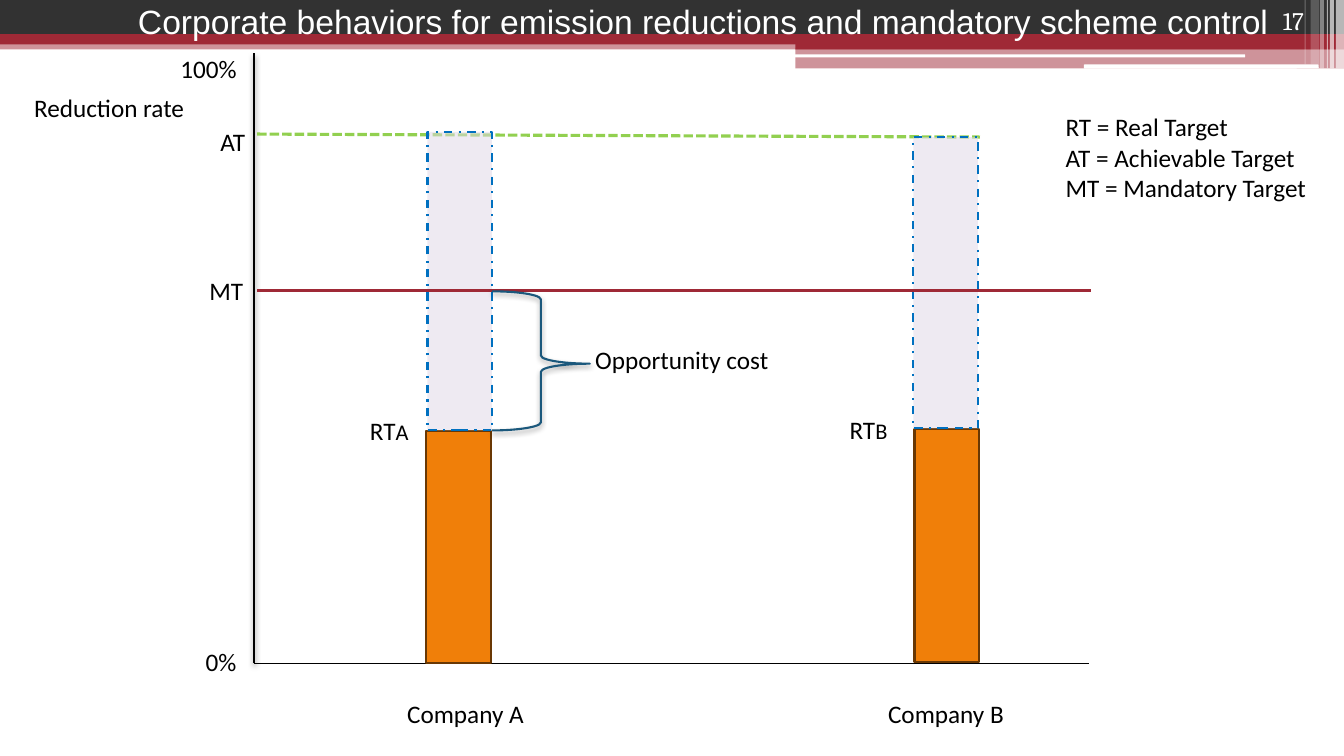
from dataclasses import dataclass
from typing import Optional

from pptx import Presentation, util as u
from pptx.dml.color import RGBColor
from pptx.enum import dml, shapes, text
from pptx.oxml import parse_xml
from pptx.oxml.ns import nsdecls, qn

RED, WHITE, BLACK = "9F2936", "FFFFFF", "000000"
ORANGE, BROWN, LILAC, BLUE = "F07F09", "693804", "DFD7E7", "0070C0"
NAVY, GREEN, CHARCOAL = "1B587C", "92D050", "323232"
RECT = shapes.MSO_SHAPE.RECTANGLE
ROUNDED = shapes.MSO_SHAPE.ROUNDED_RECTANGLE
BRACE = shapes.MSO_SHAPE.RIGHT_BRACE
DASH = dml.MSO_LINE
RIGHT = text.PP_ALIGN.RIGHT


@dataclass
class Block:
    left: float
    top: float
    width: float
    height: float
    fill: Optional[str] = None
    opacity: int = 100
    line: Optional[str] = None
    dash: Optional[DASH] = None
    kind: shapes.MSO_SHAPE = RECT
    adjustments: tuple = ()
    shadow: bool = False


@dataclass
class Rule:
    start: tuple
    end: tuple
    color: str
    weight: float
    dash: Optional[DASH] = None
    shadow: bool = False


@dataclass
class Label:
    left: float
    top: float
    width: float
    words: str
    suffix: str = ""
    align: Optional[text.PP_ALIGN] = None


def rgb(color: str) -> RGBColor:
    return RGBColor.from_string(color)


def set_effects(shape, shadow: bool) -> None:
    """Replace the theme shadow with a soft drop shadow or with nothing."""
    properties = shape._element.spPr
    for old in properties.findall(qn("a:effectLst")):
        properties.remove(old)
    drop = ('<a:outerShdw blurRad="52000" dist="25400" dir="5400000" rotWithShape="0">'
            '<a:srgbClr val="000000"><a:alpha val="40000"/></a:srgbClr></a:outerShdw>')
    properties.append(parse_xml(
        f'<a:effectLst {nsdecls("a")}>{drop if shadow else ""}</a:effectLst>'))


def set_line(line, color: str, weight: float, dash: Optional[DASH]) -> None:
    line.color.rgb = rgb(color)
    line.width = u.Pt(weight)
    if dash is not None:
        line.dash_style = dash


def draw_block(slide, block: Block) -> None:
    shape = slide.shapes.add_shape(block.kind, u.Inches(block.left), u.Inches(block.top),
                                   u.Inches(block.width), u.Inches(block.height))
    for index, value in enumerate(block.adjustments):
        shape.adjustments[index] = value
    if block.fill:
        shape.fill.solid()
        shape.fill.fore_color.rgb = rgb(block.fill)
        if block.opacity < 100:
            color = shape._element.spPr.find(qn("a:solidFill"))[0]
            color.append(parse_xml(
                f'<a:alpha {nsdecls("a")} val="{block.opacity * 1000}"/>'))
    else:
        shape.fill.background()
    if block.line:
        set_line(shape.line, block.line, 1.5, block.dash)
    else:
        shape.line.fill.background()
    set_effects(shape, block.shadow)


def draw_rule(slide, rule: Rule) -> None:
    points = [u.Inches(value) for value in (*rule.start, *rule.end)]
    connector = slide.shapes.add_connector(shapes.MSO_CONNECTOR.STRAIGHT, *points)
    set_line(connector.line, rule.color, rule.weight, rule.dash)
    set_effects(connector, rule.shadow)


def add_text(slide, left: float, top: float, width: float, lines: list, *,
             height: float = 0.4, size: int = 18, font: str = "Calibri", color: str = BLACK,
             align: Optional[text.PP_ALIGN] = None, suffix: str = "",
             anchor: text.MSO_ANCHOR = text.MSO_ANCHOR.TOP) -> None:
    box = slide.shapes.add_textbox(u.Inches(left), u.Inches(top),
                                   u.Inches(width), u.Inches(height))
    frame = box.text_frame
    frame.word_wrap = True
    frame.vertical_anchor = anchor
    for index, line in enumerate(lines):
        paragraph = frame.add_paragraph() if index else frame.paragraphs[0]
        paragraph.alignment = align
        for words, points in ((line, size), (suffix, size - 2)):
            if words:
                run = paragraph.add_run()
                run.text = words
                run.font.size = u.Pt(points)
                run.font.name = font
                run.font.color.rgb = rgb(color)


# Header bands, then the pale stripes at the right edge
HEADER = [
    Block(0, 0.4, 13.33, 0.09, RED, 50),
    Block(0, 0, 13.33, 0.34, CHARCOAL),
    Block(0, 0.34, 13.33, 0.1, RED),
    Block(7.89, 0.39, 5.44, 0.1, RED),
    Block(7.89, 0.48, 5.44, 0.2, RED, 50),
    Block(7.88, 0.54, 4.47, 0.03, WHITE, kind=ROUNDED),
    Block(10.75, 0.64, 2.33, 0.04, WHITE, kind=ROUNDED),
]
STRIPES = [
    Block(left, 0, width, height, WHITE, opacity)
    for left, width, height, opacity in (
        (13.25, 0.08, 0.68, 65), (13.19, 0.04, 0.68, 65), (13.16, 0.01, 0.68, 60),
        (13.09, 0.04, 0.68, 40), (13, 0.08, 0.64, 20), (12.94, 0.01, 0.64, 30))
]

# Diagram, from back to front
AXES = [
    Rule((2.52, 6.58), (10.8, 6.58), BLACK, 0.75),
    Rule((2.52, 6.58), (2.52, 0.53), BLACK, 1.5, shadow=True),
]
REAL_BARS = [
    Block(4.23, 4.28, 0.64, 2.3, ORANGE, line=BROWN),
    Block(9.07, 4.26, 0.64, 2.31, ORANGE, line=BROWN),
]
ACHIEVABLE_LINE = Rule((2.55, 1.33), (9.72, 1.36), GREEN, 2.25, DASH.SQUARE_DOT)
ACHIEVABLE_BARS = [
    Block(4.24, 1.31, 0.64, 2.96, LILAC, 52, BLUE, DASH.DASH_DOT),
    Block(9.06, 1.36, 0.64, 2.89, LILAC, 52, BLUE, DASH.DASH_DOT),
]
MANDATORY_LINE = Rule((2.55, 2.88), (10.82, 2.88), RED, 2.25)
COST_BRACE = Block(4.88, 2.89, 0.97, 1.38, line=NAVY, kind=BRACE,
                   adjustments=(0.083, 0.52), shadow=True)
LABELS = [
    Label(8.71, 6.88, 1.67, "Company B"),
    Label(3.94, 6.88, 1.67, "Company A"),
    Label(0.24, 0.87, 1.99, "Reduction rate"),
    Label(1.94, 6.36, 1.67, "0%"),
    Label(1.69, 0.48, 1.67, "100%"),
    Label(0, 1.2, 2.53, "AT", align=RIGHT),
    Label(2.48, 4.07, 1.67, "RT", "A", RIGHT),
    Label(7.23, 4.06, 1.67, "RT", "B", RIGHT),
    Label(-0.02, 2.68, 2.53, "MT", align=RIGHT),
    Label(5.19, 3.37, 2.53, "Opportunity cost", align=RIGHT),
]
LEGEND = ["RT = Real Target", "AT = Achievable Target", "MT = Mandatory Target"]


def main() -> None:
    presentation = Presentation()
    presentation.slide_width = u.Inches(13.33)
    presentation.slide_height = u.Inches(7.5)
    slide = presentation.slides.add_slide(presentation.slide_layouts[6])

    for part in (*HEADER, *STRIPES, *AXES, *REAL_BARS, ACHIEVABLE_LINE,
                 *ACHIEVABLE_BARS, MANDATORY_LINE, COST_BRACE):
        if isinstance(part, Rule):
            draw_rule(slide, part)
        else:
            draw_block(slide, part)

    for label in LABELS:
        add_text(slide, label.left, label.top, label.width, [label.words],
                 suffix=label.suffix, align=label.align)

    # Title, slide number and legend
    add_text(slide, 1.27, -0.04, 11.58, [
        "Corporate behaviors for emission reductions and mandatory scheme control"],
        height=0.5, size=24, font="Arial", color=WHITE)
    add_text(slide, 11.92, 0, 1.11, ["17"], font="Cambria", color=WHITE, align=RIGHT,
             anchor=text.MSO_ANCHOR.BOTTOM)
    add_text(slide, 10.47, 1.06, 2.68, LEGEND, height=1.62)

    presentation.save("out.pptx")


if __name__ == "__main__":
    main()
